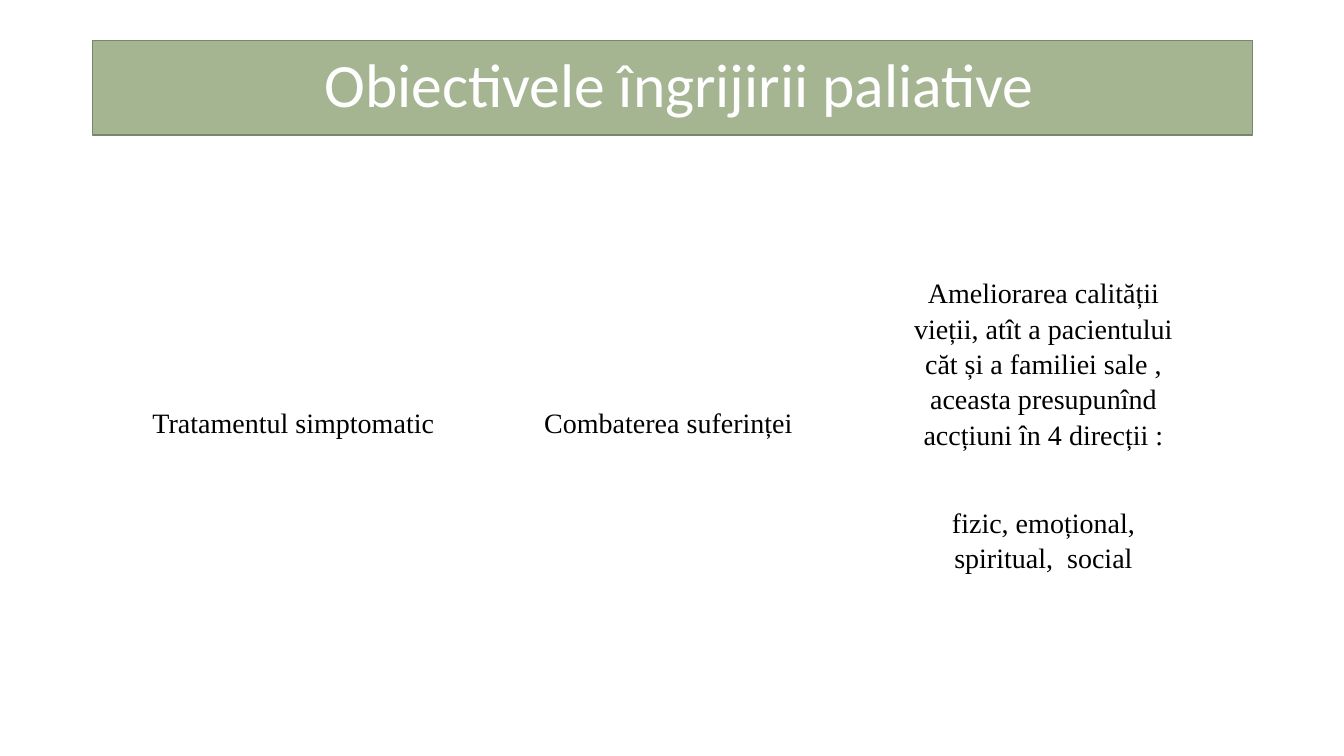
"""Build the slide on the goals of palliative care."""
import dataclasses

import pptx
import pptx.dml.color
import pptx.enum.shapes
import pptx.enum.text
import pptx.presentation
import pptx.slide
import pptx.util

Inches = pptx.util.Inches
Pt = pptx.util.Pt

COLOURS: dict[str, str] = {
    "band": "A5B592",
    "band_line": "7A866C",
    "white": "FFFFFF",
    "text": "000000",
}
CARD_LEFT, CARD_TOP, CARD_WIDTH, CARD_HEIGHT = 1.32, 1.85, 3.18, 4.72
CARD_PITCH = 3.72


@dataclasses.dataclass(frozen=True)
class Goal:
    paragraphs: tuple[str, ...]
    line_spacing: float = 0.9


GOALS: tuple[Goal, ...] = (
    Goal(("Tratamentul simptomatic",)),
    Goal(("Combaterea suferinței",)),
    Goal(
        (
            "Ameliorarea calității vieții, atît a pacientului căt și a familiei sale , "
            "aceasta presupunînd accțiuni în 4 direcții :",
            "fizic, emoțional, spiritual,  social",
        ),
        line_spacing=1.05,
    ),
)


def colour(name: str) -> pptx.dml.color.RGBColor:
    return pptx.dml.color.RGBColor.from_string(COLOURS[name])


def draw_title(slide: pptx.slide.Slide, text: str) -> None:
    title = slide.shapes.title
    title.left, title.top = Inches(0.92), Inches(0.4)
    title.width, title.height = Inches(11.5), Inches(0.94)
    title.fill.solid()
    title.fill.fore_color.rgb = colour("band")
    title.line.color.rgb = colour("band_line")
    title.line.width = Pt(1)
    frame = title.text_frame
    frame.text = text
    frame.word_wrap = True
    frame.auto_size = pptx.enum.text.MSO_AUTO_SIZE.NONE
    frame.vertical_anchor = pptx.enum.text.MSO_ANCHOR.MIDDLE
    frame.margin_left = Inches(0.24)
    paragraph = frame.paragraphs[0]
    paragraph.alignment = pptx.enum.text.PP_ALIGN.CENTER
    paragraph.line_spacing = 0.9
    paragraph.font.name = "Calibri"
    paragraph.font.size = Pt(44)
    paragraph.font.color.rgb = colour("white")


def draw_card(slide: pptx.slide.Slide, goal: Goal, left: float) -> None:
    card = slide.shapes.add_shape(
        pptx.enum.shapes.MSO_SHAPE.ROUNDED_RECTANGLE,
        Inches(left), Inches(CARD_TOP), Inches(CARD_WIDTH), Inches(CARD_HEIGHT),
    )
    card.adjustments[0] = 0.1
    card.shadow.inherit = False
    card.fill.solid()
    card.fill.fore_color.rgb = colour("white")
    card.line.fill.background()
    frame = card.text_frame
    frame.word_wrap = True
    frame.vertical_anchor = pptx.enum.text.MSO_ANCHOR.MIDDLE
    frame.margin_left = frame.margin_right = Inches(0.08)
    frame.margin_top = frame.margin_bottom = Inches(0.08)
    for index, text in enumerate(goal.paragraphs):
        paragraph = frame.add_paragraph() if index else frame.paragraphs[0]
        paragraph.text = text
        paragraph.alignment = pptx.enum.text.PP_ALIGN.CENTER
        paragraph.line_spacing = goal.line_spacing
        paragraph.space_before = Pt(38 if index else 0)
        paragraph.font.name = "Times New Roman"
        paragraph.font.size = Pt(20)
        paragraph.font.color.rgb = colour("text")


def main() -> None:
    presentation = pptx.Presentation()
    presentation.slide_width = Inches(13.33)
    presentation.slide_height = Inches(7.5)
    slide = presentation.slides.add_slide(presentation.slide_layouts[5])
    draw_title(slide, "Obiectivele îngrijirii paliative")
    for column, goal in enumerate(GOALS):
        draw_card(slide, goal, CARD_LEFT + column * CARD_PITCH)
    presentation.save("out.pptx")


if __name__ == "__main__":
    main()
